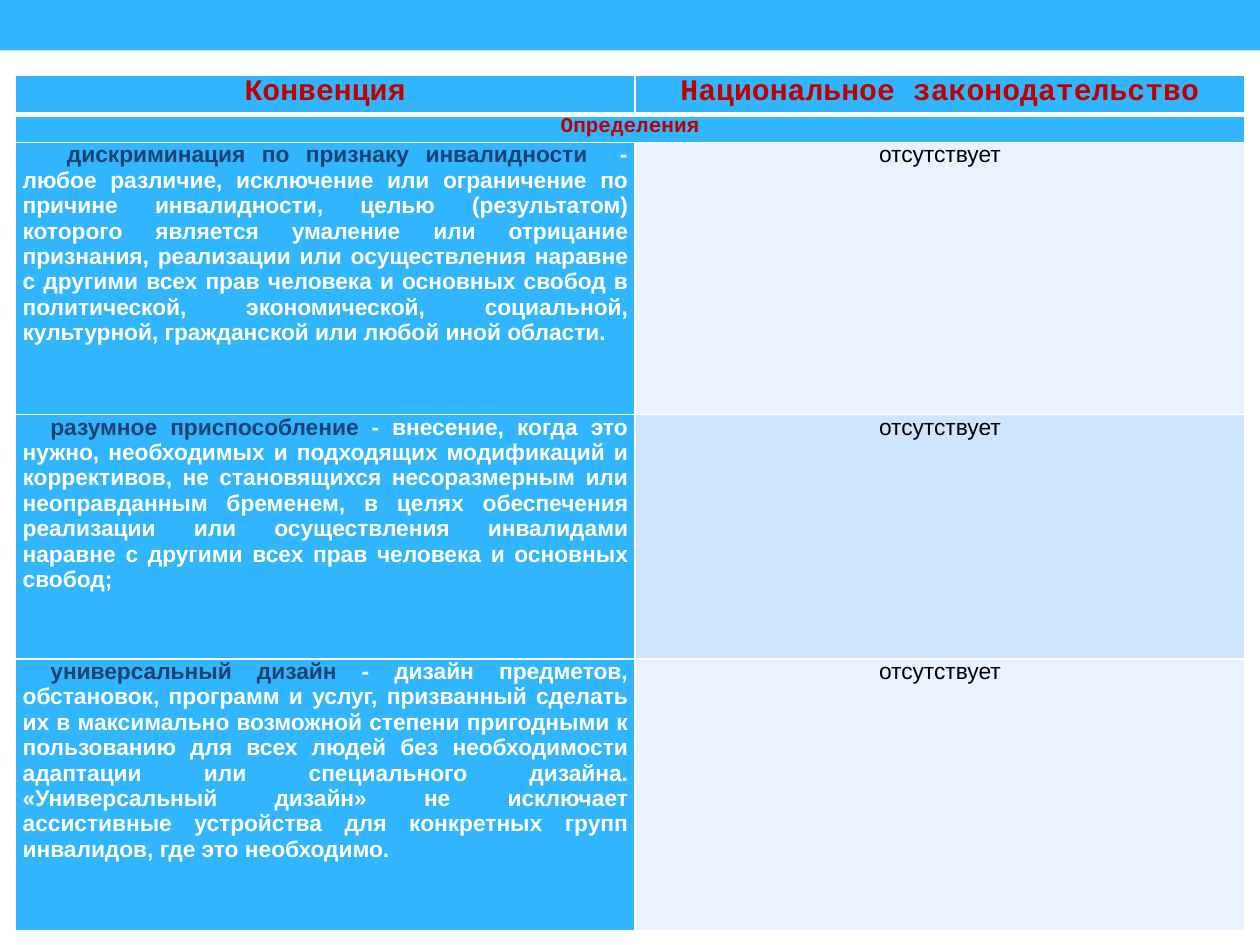
from lxml import etree
from pptx import Presentation
from pptx.dml.color import RGBColor
from pptx.enum.shapes import MSO_SHAPE
from pptx.enum.text import PP_ALIGN
from pptx.oxml.ns import qn
from pptx.util import Inches, Pt

RECT = MSO_SHAPE.RECTANGLE
CENTER, JUSTIFY = PP_ALIGN.CENTER, PP_ALIGN.JUSTIFY

COLORS = {
    "blue": "31B6FD", "red": "C00000", "navy": "1B4171", "white": "FFFFFF",
    "black": "000000", "pale": "E8F3FF", "light": "CEE5FE",
}
HEAD_FONT, BODY_FONT = "Courier New", "Arial"
HEAD_SIZE, SUBHEAD_SIZE, BODY_SIZE = 17, 12, 13
COL_WIDTHS = [4.92, 4.84]
ROW_HEIGHTS = [0.31, 0.22, 2.16, 1.94, 2.16]

HEADERS = ["Конвенция", "Национальное законодательство"]
SUBHEADER = "Определения"
ABSENT = "отсутствует"
DEFINITIONS = [
    (" дискриминация по признаку инвалидности",
     "  - любое различие, исключение или ограничение по причине инвалидности, "
     "целью (результатом) которого является умаление или отрицание признания, "
     "реализации или осуществления наравне с другими всех прав человека и "
     "основных свобод в политической, экономической, социальной, культурной, "
     "гражданской или любой иной области. "),
    ("разумное приспособление ",
     "- внесение, когда это нужно, необходимых и подходящих модификаций и "
     "коррективов, не становящихся несоразмерным или неоправданным бременем, "
     "в целях обеспечения реализации или осуществления инвалидами наравне с "
     "другими всех прав человека и основных свобод;"),
    ("универсальный дизайн ",
     "- дизайн предметов, обстановок, программ и услуг, призванный сделать их "
     "в максимально возможной степени пригодными к пользованию для всех людей "
     "без необходимости адаптации или специального дизайна. «Универсальный "
     "дизайн» не исключает ассистивные устройства для конкретных групп "
     "инвалидов, где это необходимо."),
]


def rgb(name):
    return RGBColor.from_string(COLORS[name])


def set_borders(cell, bottom=1):
    """White lines on all four sides, placed before the cell's fill."""
    tcPr = cell._tc.get_or_add_tcPr()
    for i, side in enumerate(("lnL", "lnR", "lnT", "lnB")):
        width = bottom if side == "lnB" else 1
        ln = etree.Element(qn(f"a:{side}"), w=str(Pt(width)))
        fill = etree.SubElement(ln, qn("a:solidFill"))
        etree.SubElement(fill, qn("a:srgbClr"), val=COLORS["white"])
        tcPr.insert(i, ln)


def fill_cell(cell, runs, fill, size, font=BODY_FONT, bold=True,
              align=CENTER, indent=0, bottom=1):
    """Write (text, colour) runs into a cell and style it."""
    cell.margin_left = cell.margin_right = Inches(0.06)
    cell.margin_top = cell.margin_bottom = 0
    cell.fill.solid()
    cell.fill.fore_color.rgb = rgb(fill)
    set_borders(cell, bottom)
    p = cell.text_frame.paragraphs[0]
    p.alignment = align
    if indent:
        pPr = p._p.get_or_add_pPr()
        pPr.set("marL", "0")
        pPr.set("indent", str(Inches(indent)))
    for text, color in runs:
        r = p.add_run()
        r.text = text
        r.font.name = font
        r.font.size = Pt(size)
        r.font.bold = bold
        r.font.color.rgb = rgb(color)


def add_top_band(s, x, y, w, h):
    sp = s.shapes.add_shape(RECT, Inches(x), Inches(y), Inches(w), Inches(h))
    sp.shadow.inherit = False
    sp.fill.solid()
    sp.fill.fore_color.rgb = rgb("blue")
    sp.line.fill.background()


def add_comparison_table(s, x, y):
    table = s.shapes.add_table(
        len(ROW_HEIGHTS), len(COL_WIDTHS), Inches(x), Inches(y),
        Inches(sum(COL_WIDTHS)), Inches(sum(ROW_HEIGHTS))).table
    for col, width in zip(table.columns, COL_WIDTHS):
        col.width = Inches(width)
    for row, height in zip(table.rows, ROW_HEIGHTS):
        row.height = Inches(height)

    # Column headers
    for c, text in enumerate(HEADERS):
        fill_cell(table.cell(0, c), [(text, "red")], "blue", HEAD_SIZE,
                  HEAD_FONT, bottom=3)

    # Section heading across both columns
    table.cell(1, 0).merge(table.cell(1, 1))
    fill_cell(table.cell(1, 0), [(SUBHEADER, "red")], "blue", SUBHEAD_SIZE,
              HEAD_FONT)

    # Definitions beside their national counterpart
    for i, (term, meaning) in enumerate(DEFINITIONS):
        fill_cell(table.cell(i + 2, 0), [(term, "navy"), (meaning, "white")],
                  "blue", BODY_SIZE, align=JUSTIFY, indent=0.22)
        fill_cell(table.cell(i + 2, 1), [(ABSENT, "black")],
                  "light" if i % 2 else "pale", BODY_SIZE, bold=False)


def main():
    prs = Presentation()
    prs.slide_width, prs.slide_height = Inches(10), Inches(7.5)
    s = prs.slides.add_slide(prs.slide_layouts[6])
    add_top_band(s, 0, 0, 10, 0.4)
    add_comparison_table(s, 0.12, 0.6)
    prs.save("out.pptx")


if __name__ == "__main__":
    main()
